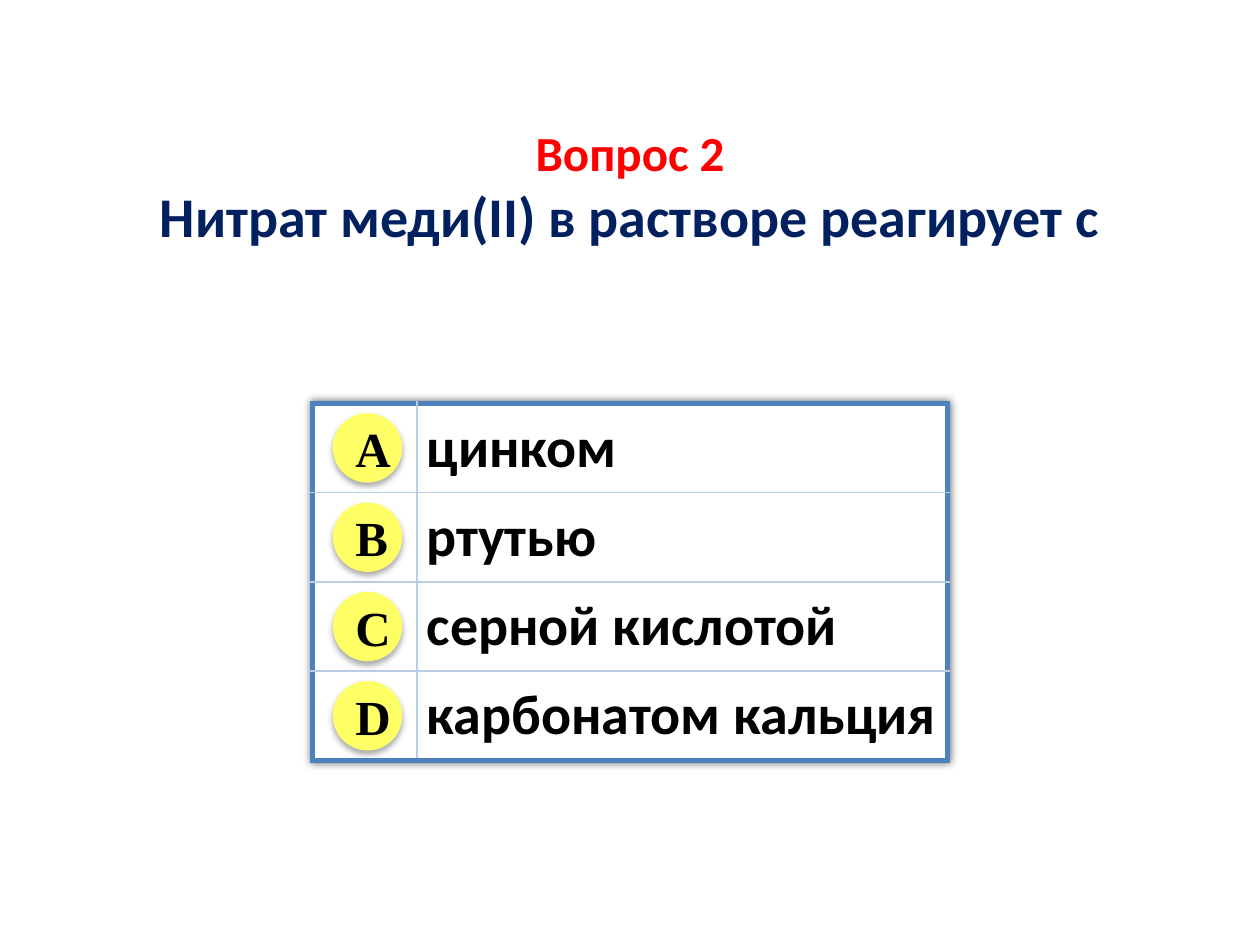
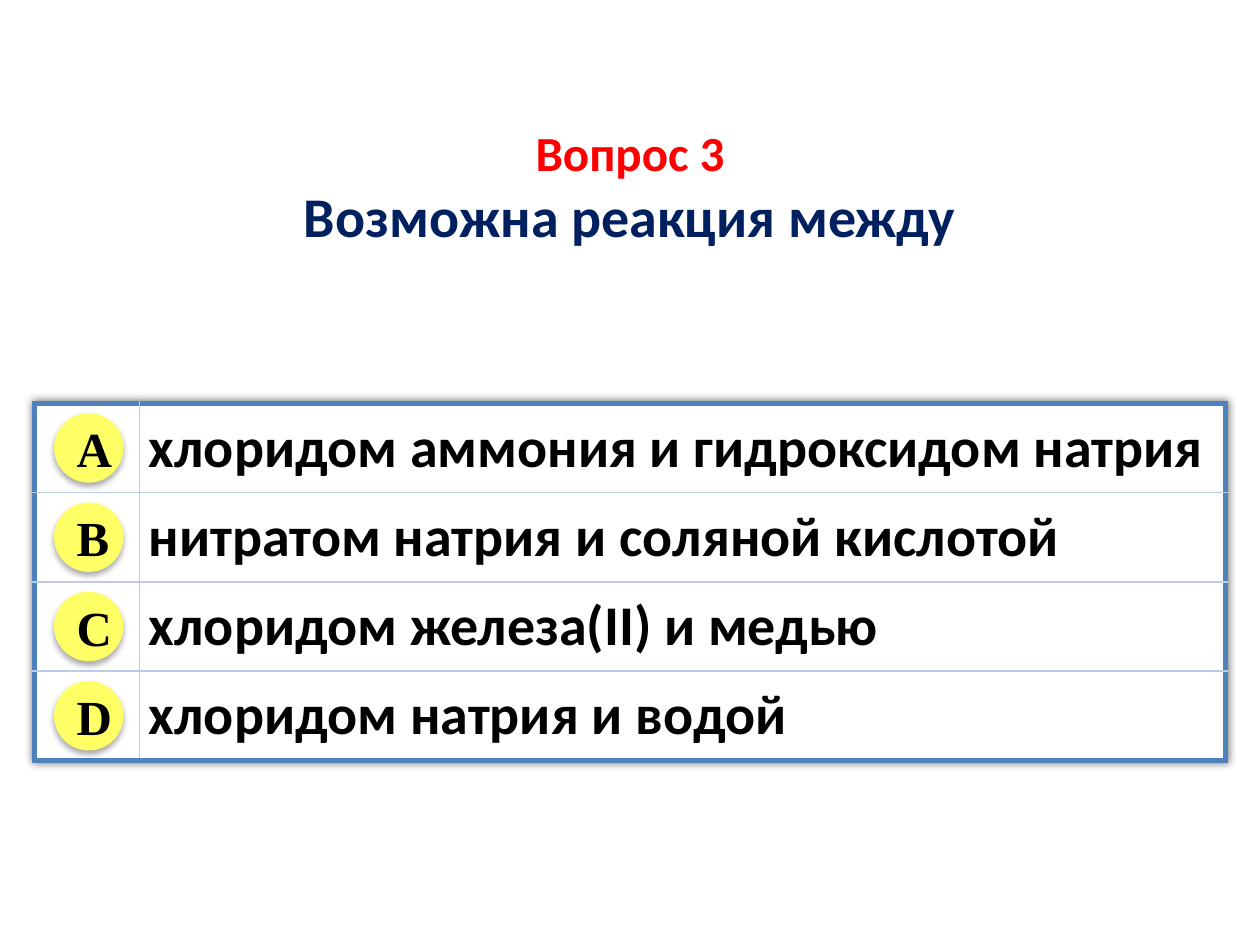
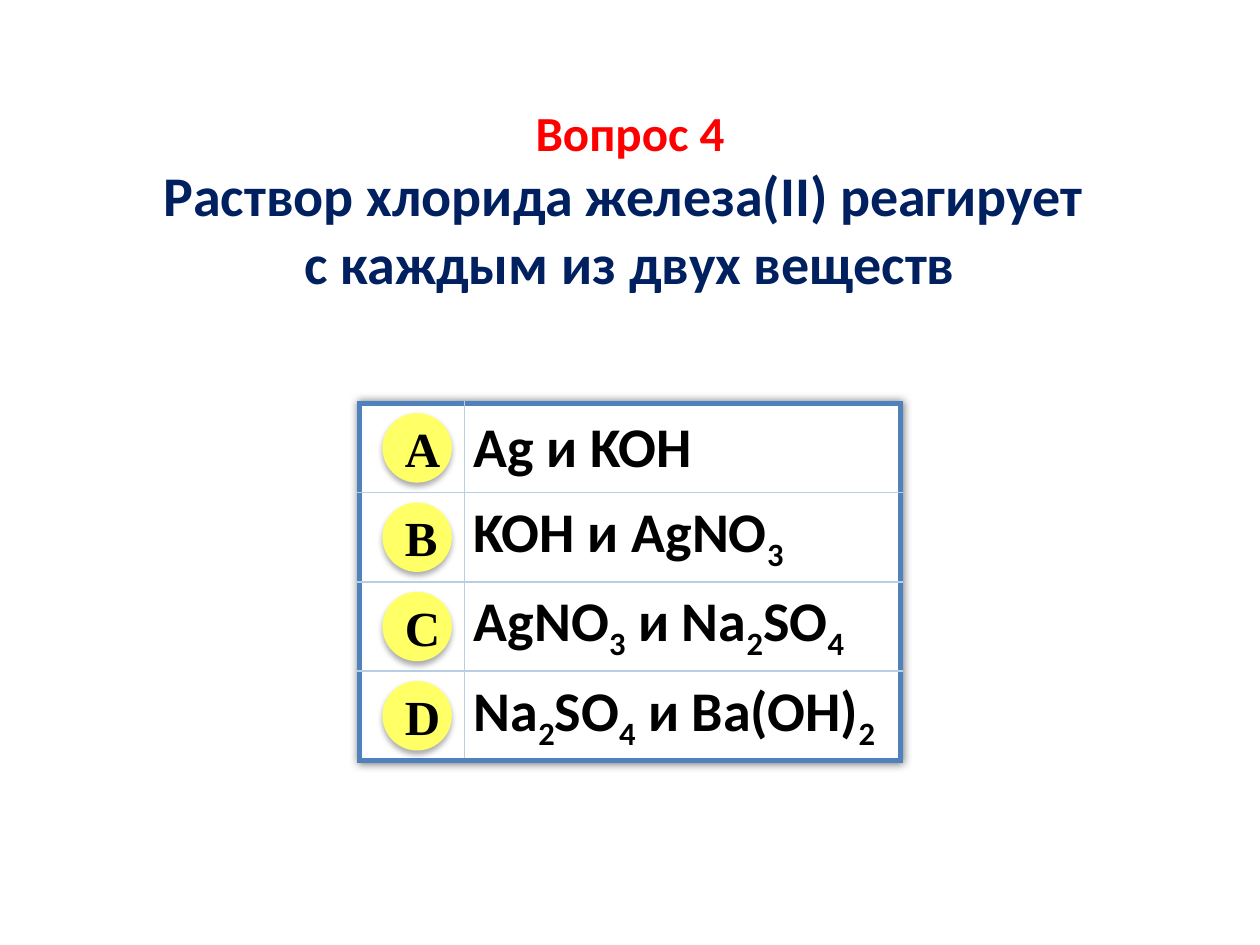
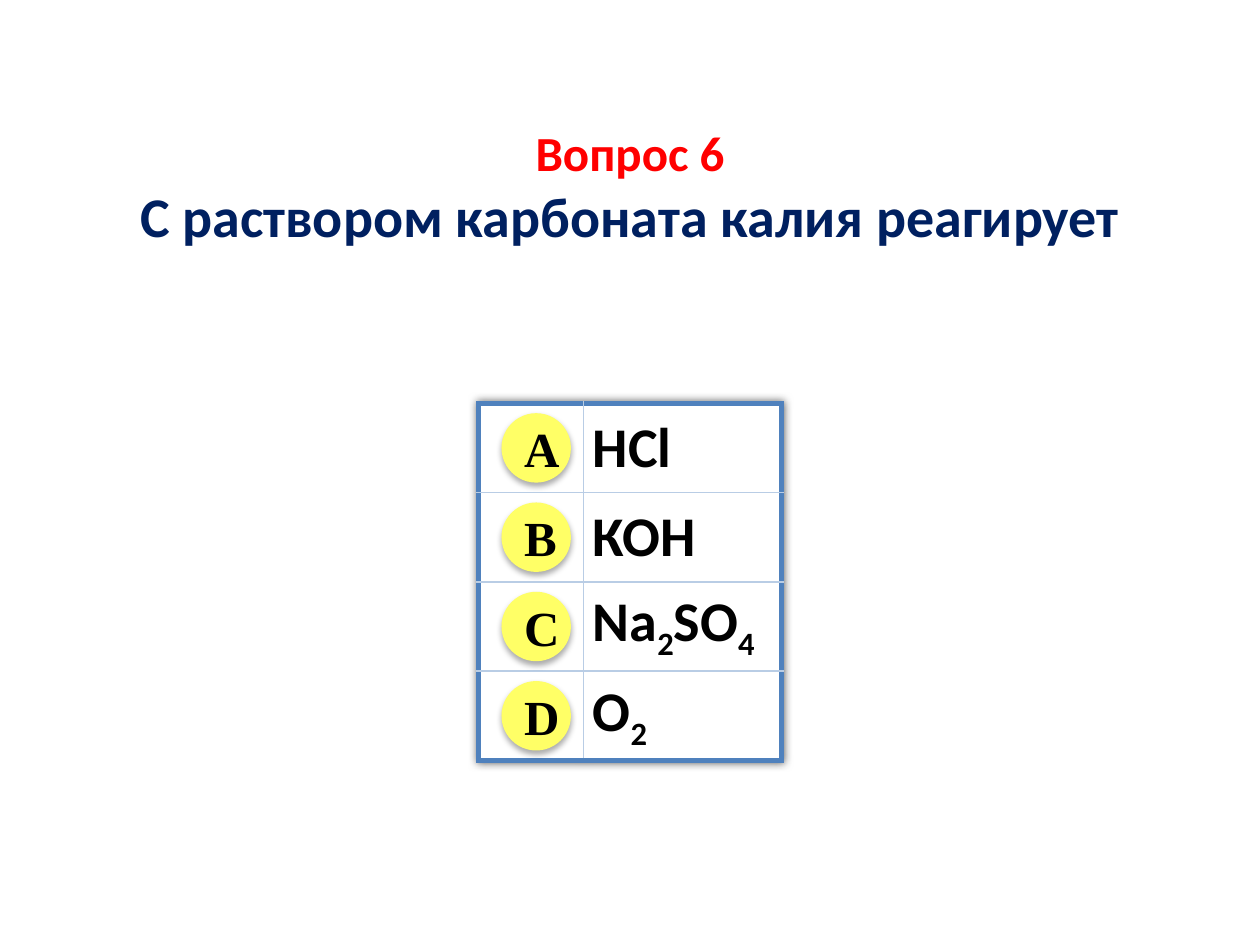
"""Builds four chemistry quiz slides, each with a question and four lettered answers."""
import dataclasses
import itertools

import lxml.etree
import pptx
import pptx.dml.color
import pptx.enum.shapes
import pptx.enum.text
import pptx.oxml.ns
import pptx.util

Cm = pptx.util.Cm
Pt = pptx.util.Pt
qn = pptx.oxml.ns.qn
ALIGN = pptx.enum.text.PP_ALIGN
ANCHOR = pptx.enum.text.MSO_ANCHOR


@dataclasses.dataclass(frozen=True)
class Theme:
    paper: str = "FFFFFF"
    ink: str = "000000"
    number: str = "FF0000"
    question: str = "002060"
    marker: str = "FFFF66"
    frame: str = "4F81BD"
    grid: str = "B9CDE5"
    body_font: str = "Calibri"
    marker_font: str = "Times New Roman"
    large: int = 32
    small: int = 28
    frame_width: int = 3
    grid_width: int = 1


SLIDE_WIDTH, SLIDE_HEIGHT = 25.4, 19.05
TITLE_LEFT, TITLE_WIDTH = 0.6, 24.2
ANSWERS_TOP, ROW_HEIGHT, LETTER_WIDTH = 8.13, 1.8, 2.11
MARKER_SIZE = 1.4

QUIZ = [
    dict(number=2, question=["Нитрат меди(II) в растворе реагирует с"],
         answers=["цинком", "ртутью", "серной кислотой", "карбонатом кальция"],
         answer_width=10.69, marker_inset=0.41),
    dict(number=3, question=["Возможна реакция между"],
         answers=["хлоридом аммония и гидроксидом натрия",
                  "нитратом натрия и соляной кислотой",
                  "хлоридом железа(II) и медью",
                  "хлоридом натрия и водой"],
         answer_width=21.89, marker_inset=0.39),
    dict(number=4,
         question=["Раствор хлорида железа(II) реагирует ", "с каждым из двух веществ"],
         answers=["Ag и KOH", "KOH и AgNO3", "AgNO3 и Na2SO4", "Na2SO4 и Ba(OH)2"],
         answer_width=8.79, marker_inset=0.46),
    dict(number=6, question=["С раствором карбоната калия реагирует"],
         answers=["НСl", "КОН", "Na2SO4", "О2"],
         answer_width=3.99, marker_inset=0.46),
]


def rgb(value):
    return pptx.dml.color.RGBColor.from_string(value)


def apply(target, values):
    for name, value in values.items():
        setattr(target, name, value)


def add_child(parent, tag, **attributes):
    child = lxml.etree.SubElement(parent, qn(tag))
    for name, value in attributes.items():
        child.set(name, str(value))
    return child


class Quiz:
    def __init__(self, theme):
        self.theme = theme
        self.deck = pptx.Presentation()
        apply(self.deck, dict(slide_width=Cm(SLIDE_WIDTH), slide_height=Cm(SLIDE_HEIGHT)))
        self.slide = None

    def add_slide(self):
        self.slide = self.deck.slides.add_slide(self.deck.slide_layouts[5])

    def add_text(self, paragraph, text, size, color, font=None):
        run = paragraph.add_run()
        run.text = text
        apply(run.font, dict(name=font or self.theme.body_font, size=Pt(size), bold=True))
        run.font.color.rgb = rgb(color)
        return run

    def shade(self, effects, blur, distance, opacity):
        shadow = add_child(effects, "a:outerShdw", blurRad=Pt(blur), dist=Pt(distance),
                           dir=5400000, algn="ctr", rotWithShape=0)
        black = add_child(shadow, "a:srgbClr", val=self.theme.ink)
        add_child(black, "a:alpha", val=opacity * 1000)

    def title(self, number, question):
        extra_lines = len(question) - 1
        heading = self.slide.shapes.title
        apply(heading, dict(left=Cm(TITLE_LEFT), top=Cm(2.34 - 0.41 * extra_lines),
                            width=Cm(TITLE_WIDTH), height=Cm(2.82 + 1.37 * extra_lines)))
        heading.fill.solid()
        heading.fill.fore_color.rgb = rgb(self.theme.paper)
        frame = heading.text_frame
        apply(frame, dict(word_wrap=True, vertical_anchor=ANCHOR.TOP,
                          auto_size=pptx.enum.text.MSO_AUTO_SIZE.SHAPE_TO_FIT_TEXT))
        first = frame.paragraphs[0]
        self.add_text(first, f"Вопрос {number}", self.theme.small, self.theme.number)
        for line in question:
            self.add_text(frame.add_paragraph(), line, self.theme.large, self.theme.question)
        for paragraph in frame.paragraphs:
            paragraph.alignment = ALIGN.CENTER

    def border(self, cell, outer_sides):
        properties = cell._tc.get_or_add_tcPr()
        for side in "LRTB":
            outer = side in outer_sides
            width = self.theme.frame_width if outer else self.theme.grid_width
            line = add_child(properties, f"a:ln{side}", w=Pt(width))
            fill = add_child(line, "a:solidFill")
            add_child(fill, "a:srgbClr", val=self.theme.frame if outer else self.theme.grid)

    def formula(self, paragraph, text):
        for is_index, part in itertools.groupby(text, str.isdigit):
            run = self.add_text(paragraph, "".join(part), self.theme.large, self.theme.ink)
            if is_index:
                run.font._element.set("baseline", "-25000")

    def answer_table(self, left, answers, answer_width):
        count = len(answers)
        table = self.slide.shapes.add_table(
            count, 2, Cm(left), Cm(ANSWERS_TOP),
            Cm(LETTER_WIDTH + answer_width), Cm(ROW_HEIGHT * count)).table
        apply(table, dict(first_row=False, horz_banding=False))
        table.columns[0].width = Cm(LETTER_WIDTH)
        table.columns[1].width = Cm(answer_width)
        effects = lxml.etree.Element(qn("a:effectLst"))
        table._tbl.tblPr.insert(0, effects)
        self.shade(effects, 5, 0, 60)
        for row, answer in enumerate(answers):
            table.rows[row].height = Cm(ROW_HEIGHT)
            vertical = "T" * (row == 0) + "B" * (row == count - 1)
            for column, side in enumerate("LR"):
                cell = table.cell(row, column)
                self.border(cell, side + vertical)
                cell.fill.solid()
                cell.fill.fore_color.rgb = rgb(self.theme.paper)
                apply(cell, dict(margin_left=Cm(0.19), margin_right=Cm(0.19), margin_top=0,
                                 margin_bottom=0, vertical_anchor=ANCHOR.MIDDLE))
            self.formula(table.cell(row, 1).text_frame.paragraphs[0], answer)

    def markers(self, left, count):
        group = self.slide.shapes.add_group_shape()
        top = ANSWERS_TOP + (ROW_HEIGHT - MARKER_SIZE) / 2
        for row, letter in enumerate("ABCD"[:count]):
            marker = group.shapes.add_shape(
                pptx.enum.shapes.MSO_SHAPE.OVAL, Cm(left), Cm(top + row * ROW_HEIGHT),
                Cm(MARKER_SIZE), Cm(MARKER_SIZE))
            marker.fill.solid()
            marker.fill.fore_color.rgb = rgb(self.theme.marker)
            marker.line.fill.background()
            marker.shadow.inherit = False
            self.shade(marker._element.spPr.find(qn("a:effectLst")), 3.5, 2.2, 32)
            apply(marker.text_frame, dict(word_wrap=True, vertical_anchor=ANCHOR.MIDDLE))
            paragraph = marker.text_frame.paragraphs[0]
            paragraph.alignment = ALIGN.CENTER
            self.add_text(paragraph, letter, self.theme.small, self.theme.ink,
                          self.theme.marker_font)

    def question_slide(self, number, question, answers, answer_width, marker_inset):
        left = (SLIDE_WIDTH - LETTER_WIDTH - answer_width) / 2
        self.add_slide()
        self.title(number, question)
        self.answer_table(left, answers, answer_width)
        self.markers(left + marker_inset, len(answers))


def main():
    quiz = Quiz(Theme())
    for item in QUIZ:
        quiz.question_slide(**item)
    quiz.deck.save("out.pptx")


if __name__ == "__main__":
    main()
